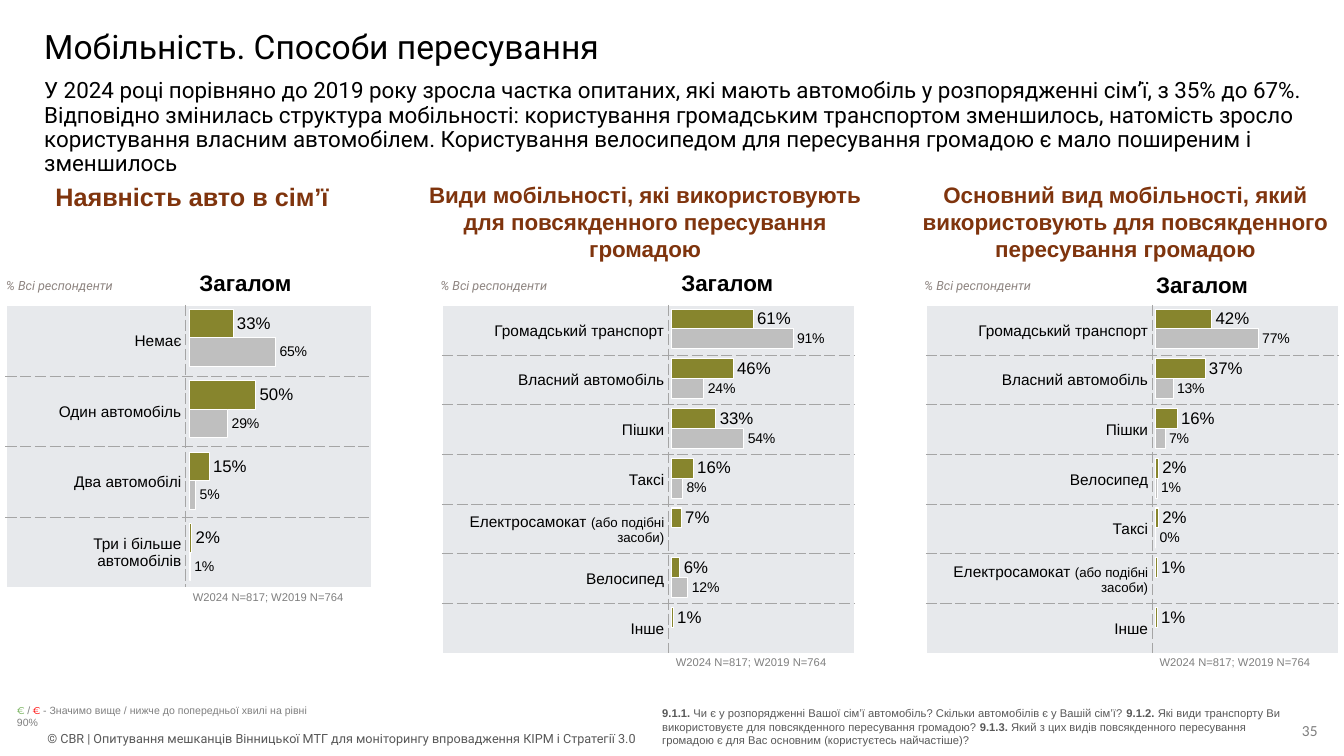
"""Build the slide on household cars and everyday travel modes."""
from dataclasses import dataclass
from typing import Any, Optional

import pptx
import pptx.chart.data
import pptx.dml.color
import pptx.enum.chart
import pptx.enum.shapes
import pptx.enum.text
import pptx.oxml
import pptx.oxml.ns
import pptx.util

Pt = pptx.util.Pt
Anchor = pptx.enum.text.MSO_ANCHOR
Align = pptx.enum.text.PP_ALIGN


@dataclass(frozen=True)
class Style:
    size: float
    color: str = "000000"
    name: str = "Arial"
    bold: bool = False
    italic: bool = False


@dataclass(frozen=True)
class Theme:
    current: str = "87852D"
    previous: str = "BFBFBF"
    band: str = "E7E9EC"
    white: str = "FFFFFF"
    divider: str = "A5A5A5"
    title: Style = Style(24, name="Roboto")
    summary: Style = Style(16, name="Roboto")
    footer: Style = Style(9, "585858", "Roboto")
    page: Style = Style(11, "7F7F7F", "Calibri")
    panel_wide: Style = Style(18, "7F340D", bold=True)
    panel: Style = Style(16, "7F340D", bold=True)
    heading: Style = Style(16, bold=True)
    respondents: Style = Style(9, "8E8581", "Roboto", italic=True)
    base: Style = Style(8, "7F7F7F")
    label: Style = Style(11)
    label_note: Style = Style(9.5)
    value: Style = Style(12)
    value_previous: Style = Style(10)
    question: Style = Style(8, "585858")
    question_number: Style = Style(8, "585858", bold=True)
    higher: Style = Style(7, "6BAB4F", "Montserrat")
    lower: Style = Style(7, "FF0000", "Montserrat")
    legend: Style = Style(7.5, "7F7F7F")


THEME = Theme()
Runs = list[tuple[str, Style]]


@dataclass(frozen=True)
class Box:
    left: float
    top: float
    width: float
    height: float

    def lengths(self) -> list[pptx.util.Length]:
        return [Pt(value) for value in (self.left, self.top, self.width, self.height)]


@dataclass(frozen=True)
class TextBlock:
    box: Box
    runs: Runs
    margins: tuple[float, float, float, float] = (7.2, 3.6, 7.2, 3.6)
    anchor: Any = Anchor.MIDDLE
    alignment: Any = Align.LEFT
    spacing: float = 1.0
    fill: Optional[str] = None


@dataclass(frozen=True)
class Answer:
    label: str
    current: float
    previous: Optional[float] = None
    note: str = ""


@dataclass(frozen=True)
class Panel:
    title: str
    title_style: Style
    title_left: float
    title_width: float
    note_left: float
    grid_left: float
    label_width: float
    row_height: float
    heading_left: float
    heading_top: float
    answers: list[Answer]


def color(code: str) -> pptx.dml.color.RGBColor:
    return pptx.dml.color.RGBColor.from_string(code)


def set_attributes(target: Any, values: dict[str, Any]) -> None:
    for name, value in values.items():
        setattr(target, name, value)


def set_font(font: Any, style: Style) -> None:
    set_attributes(font, {"name": style.name, "size": Pt(style.size),
                          "bold": style.bold, "italic": style.italic})
    font.color.rgb = color(style.color)


def set_margins(target: Any, margins: tuple[float, float, float, float], anchor: Any) -> None:
    sides = ("margin_left", "margin_top", "margin_right", "margin_bottom")
    set_attributes(target, {side: Pt(value) for side, value in zip(sides, margins)})
    target.vertical_anchor = anchor


def write_runs(text_frame: Any, runs: Runs, alignment: Any, spacing: float = 1.0) -> None:
    paragraph = text_frame.paragraphs[0]
    set_attributes(paragraph, {"alignment": alignment, "line_spacing": spacing})
    for text, style in runs:
        run = paragraph.add_run()
        run.text = text
        set_font(run.font, style)


def draw_text(slide: Any, block: TextBlock) -> None:
    if block.fill:
        rectangle = pptx.enum.shapes.MSO_SHAPE.RECTANGLE
        shape = slide.shapes.add_shape(rectangle, *block.box.lengths())
        shape.shadow.inherit = False
        shape.fill.solid()
        shape.fill.fore_color.rgb = color(block.fill)
        shape.line.fill.background()
    else:
        shape = slide.shapes.add_textbox(*block.box.lengths())
    shape.text_frame.word_wrap = True
    set_margins(shape.text_frame, block.margins, block.anchor)
    write_runs(shape.text_frame, block.runs, block.alignment, block.spacing)


def add_plain_table(slide: Any, rows: int, columns: int, box: Box) -> Any:
    table = slide.shapes.add_table(rows, columns, *box.lengths()).table
    set_attributes(table, {"first_row": False, "horz_banding": False})
    table._tbl.tblPr[0].text = "{2D5ABB26-0587-4C30-8999-92F81FD0307C}"
    return table


def draw_caption(slide: Any, block: TextBlock) -> None:
    cell = add_plain_table(slide, 1, 1, block.box).cell(0, 0)
    cell.fill.background()
    set_margins(cell, block.margins, block.anchor)
    write_runs(cell.text_frame, block.runs, block.alignment)


def set_borders(cell: Any, dashed: dict[str, bool]) -> None:
    properties = cell._tc.get_or_add_tcPr()
    for index, (side, inner) in enumerate(dashed.items()):
        width, code, dash = (0.75, THEME.divider, "lgDash") if inner else (1, THEME.white, "solid")
        properties.insert(index, pptx.oxml.parse_xml(
            f'<a:ln{side} {pptx.oxml.ns.nsdecls("a")} w="{Pt(width)}"><a:solidFill>'
            f'<a:srgbClr val="{code}"/></a:solidFill><a:prstDash val="{dash}"/></a:ln{side}>'))


def draw_grid(slide: Any, panel: Panel) -> None:
    count = len(panel.answers)
    widths = (panel.label_width, 133.2)
    box = Box(panel.grid_left, 218.2, sum(widths), count * panel.row_height)
    table = add_plain_table(slide, count, 2, box)
    for column, width in zip(table.columns, widths):
        column.width = Pt(width)
    for row, answer in enumerate(panel.answers):
        for column in range(2):
            cell = table.cell(row, column)
            cell.fill.solid()
            cell.fill.fore_color.rgb = color(THEME.band)
            set_margins(cell, (0.7, 0.7, 2.9, 0), Anchor.MIDDLE)
            set_borders(cell, {"L": column == 1, "R": column == 0,
                               "T": row > 0, "B": row < count - 1})
        runs = [(answer.label, THEME.label)]
        if answer.note:
            runs = [(answer.label + " ", THEME.label), (answer.note, THEME.label_note)]
        write_runs(table.cell(row, 0).text_frame, runs, Align.RIGHT)


def draw_chart(slide: Any, panel: Panel, box: Box) -> None:
    data = pptx.chart.data.CategoryChartData(number_format="0%")
    data.categories = [str(number + 1) for number in range(len(panel.answers))]
    data.add_series("Series 1", [answer.current for answer in panel.answers])
    data.add_series("Series 2", [answer.previous for answer in panel.answers])
    bar_type = pptx.enum.chart.XL_CHART_TYPE.BAR_CLUSTERED
    chart = slide.shapes.add_chart(bar_type, *box.lengths(), data).chart
    set_attributes(chart, {"has_legend": False, "has_title": False})
    set_font(chart.font, THEME.value)
    set_attributes(chart.category_axis, {"visible": False, "reverse_order": True})
    set_attributes(chart.value_axis, {"visible": False, "has_major_gridlines": False,
                                      "minimum_scale": 0, "maximum_scale": 1.15})
    plot = chart.plots[0]
    set_attributes(plot, {"gap_width": 50, "overlap": 0, "vary_by_categories": False})
    looks = ((THEME.current, THEME.value), (THEME.previous, THEME.value_previous))
    for series, (code, style) in zip(plot.series, looks):
        series.invert_if_negative = False
        series.format.fill.solid()
        series.format.fill.fore_color.rgb = color(code)
        series.format.line.color.rgb = color(THEME.white)
        series.format.line.width = Pt(0.75)
        set_attributes(series.data_labels, {
            "show_value": True, "number_format": "0%", "number_format_is_linked": False,
            "position": pptx.enum.chart.XL_LABEL_POSITION.OUTSIDE_END})
        set_font(series.data_labels.font, style)
    area = chart._chartSpace.chart.plotArea
    for layout in area.findall(pptx.oxml.ns.qn("c:layout")):
        area.remove(layout)
    modes = '<c:layoutTarget val="inner"/><c:xMode val="edge"/><c:yMode val="edge"/>'
    sizes = '<c:x val="0.016"/><c:y val="0.027"/><c:w val="0.849"/><c:h val="0.957"/>'
    area.insert(0, pptx.oxml.parse_xml(
        f'<c:layout {pptx.oxml.ns.nsdecls("c")}><c:manualLayout>{modes}{sizes}'
        '</c:manualLayout></c:layout>'))


def draw_panel(slide: Any, panel: Panel) -> None:
    grid_height = len(panel.answers) * panel.row_height
    chart_left = panel.grid_left + panel.label_width + 0.5
    draw_caption(slide, TextBlock(Box(chart_left - 2.4, 216.8 + grid_height, 130.3, 17.3),
                                  [("W2024 N=817; W2019 N=764", THEME.base)], anchor=Anchor.TOP))
    draw_grid(slide, panel)
    draw_chart(slide, panel, Box(chart_left, 210.2, 128.9, grid_height + 11.5))
    draw_caption(slide, TextBlock(Box(panel.heading_left, panel.heading_top, 130, 28.1),
                                  [("Загалом", THEME.heading)], (0.7, 0.7, 0.7, 0)))
    draw_text(slide, TextBlock(Box(panel.title_left, 126, panel.title_width, 46.1),
                               [(panel.title, panel.title_style)],
                               anchor=Anchor.TOP, alignment=Align.CENTER))
    draw_text(slide, TextBlock(Box(panel.note_left, 198.7, 113, 10.8),
                               [("% Всі респонденти", THEME.respondents)],
                               (0, 0, 0, 0), Anchor.TOP))


SCOOTER, SCOOTER_NOTE = "Електросамокат", "(або подібні засоби)"
PANELS = [
    Panel("Наявність авто в сім’ї", THEME.panel_wide, 6.5, 261.4, 4.3, 4.3, 128.2, 50.4,
          141.8, 188.6,
          [Answer("Немає", 0.33, 0.65), Answer("Один автомобіль", 0.5, 0.29),
           Answer("Два автомобілі", 0.15, 0.05), Answer("Три і більше автомобілів", 0.02, 0.01)]),
    Panel("Види мобільності, які використовують для повсякденного пересування громадою",
          THEME.panel, 297.4, 326.9, 314.6, 316.1, 161.3, 35.5, 486, 188.6,
          [Answer("Громадський транспорт", 0.61, 0.91), Answer("Власний автомобіль", 0.46, 0.24),
           Answer("Пішки", 0.33, 0.54), Answer("Таксі", 0.16, 0.08),
           Answer(SCOOTER, 0.07, note=SCOOTER_NOTE), Answer("Велосипед", 0.06, 0.12),
           Answer("Інше", 0.01)]),
    Panel("Основний вид мобільності, який використовують для повсякденного пересування громадою",
          THEME.panel, 648, 311.8, 660.2, 661.7, 161.3, 35.5, 825.1, 189.4,
          [Answer("Громадський транспорт", 0.42, 0.77), Answer("Власний автомобіль", 0.37, 0.13),
           Answer("Пішки", 0.16, 0.07), Answer("Велосипед", 0.02, 0.01), Answer("Таксі", 0.02, 0),
           Answer(SCOOTER, 0.01, note=SCOOTER_NOTE), Answer("Інше", 0.01)]),
]
SUMMARY = (
    "У 2024 році порівняно до 2019 року зросла частка опитаних, які мають автомобіль у "
    "розпорядженні сім’ї, з 35% до 67%. Відповідно змінилась структура мобільності: користування "
    "громадським транспортом зменшилось, натомість зросло користування власним автомобілем. "
    "Користування велосипедом для пересування громадою є мало поширеним і зменшилось")
QUESTIONS = [
    ("9.1.1. ", "Чи є у розпорядженні Вашої сім’ї автомобіль? Скільки автомобілів є у Вашій сім’ї? "),
    ("9.1.2. ", "Які види транспорту Ви використовуєте для повсякденного пересування громадою? "),
    ("9.1.3. ", "Який з цих видів повсякденного пересування громадою є для Вас основним "
                "(користуєтесь найчастіше)?"),
]
TEXTS = [
    TextBlock(Box(33.8, 519.8, 740.9, 15.1),
              [("© CBR | Опитування мешканців Вінницької МТГ для моніторингу впровадження "
                "КІРМ і Стратегії 3.0", THEME.footer)], (0, 0, 0, 0), fill=THEME.white),
    TextBlock(Box(24.5, 8.6, 823.7, 52.6), [("Мобільність. Способи пересування", THEME.title)],
              spacing=0.9),
    TextBlock(Box(24.5, 56.9, 915.1, 69.1), [(SUMMARY, THEME.summary)], spacing=0.9),
    TextBlock(Box(918.7, 511.2, 33.8, 20.9), [("35", THEME.page)], (9.4, 5, 9.4, 5),
              alignment=Align.CENTER),
    TextBlock(Box(451.4, 501.1, 473.8, 36),
              [run for number, question in QUESTIONS
               for run in ((number, THEME.question_number), (question, THEME.question))],
              (21.6, 3.6, 7.2, 3.6), Anchor.TOP),
    TextBlock(Box(5, 503.3, 231.1, 16.6),
              [("€ ", THEME.higher), ("/", THEME.legend), (" ", THEME.higher), ("€ ", THEME.lower),
               ("- Значимо вище / нижче до попередньої хвилі на рівні 90%", THEME.legend)]),
]


def main() -> None:
    presentation = pptx.Presentation()
    set_attributes(presentation, {"slide_width": Pt(960), "slide_height": Pt(540)})
    slide = presentation.slides.add_slide(presentation.slide_layouts[6])
    for block in TEXTS:
        draw_text(slide, block)
    for panel in PANELS:
        draw_panel(slide, panel)
    presentation.save("out.pptx")


if __name__ == "__main__":
    main()
